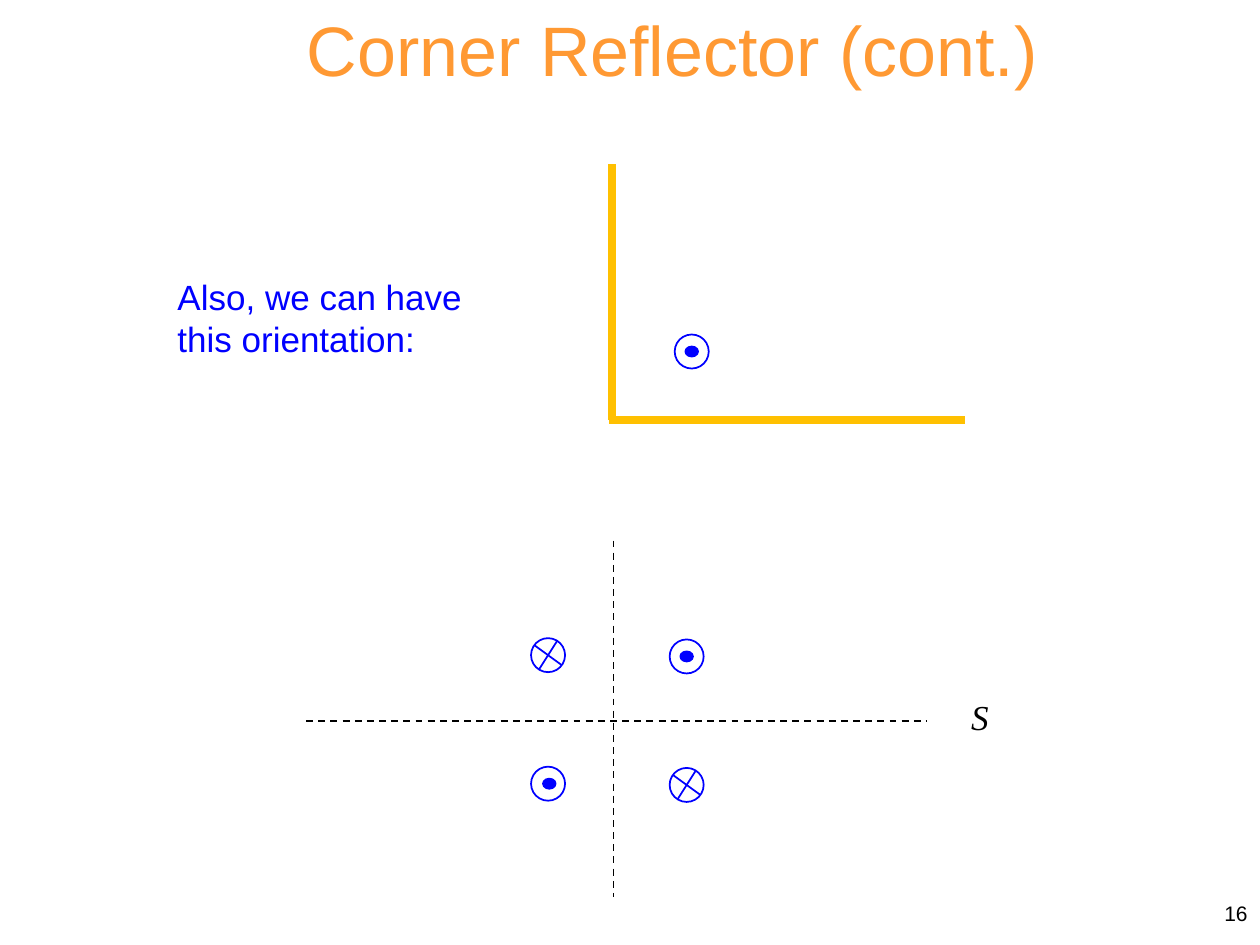
from typing import NamedTuple

from lxml import etree
from pptx import Presentation
from pptx.dml.color import RGBColor
from pptx.enum.dml import MSO_LINE
from pptx.enum.shapes import MSO_CONNECTOR, MSO_SHAPE
from pptx.enum.text import MSO_ANCHOR, PP_ALIGN
from pptx.oxml.ns import qn
from pptx.util import Inches, Pt

ORANGE = RGBColor(0xFF, 0x99, 0x33)
GOLD = RGBColor(0xFF, 0xC0, 0x00)
BLUE = RGBColor(0x00, 0x00, 0xFF)
BLACK = RGBColor(0x00, 0x00, 0x00)
LEFT, CENTER, RIGHT = PP_ALIGN.LEFT, PP_ALIGN.CENTER, PP_ALIGN.RIGHT
TOP, MIDDLE = MSO_ANCHOR.TOP, MSO_ANCHOR.MIDDLE
DASH = MSO_LINE.DASH
STRAIGHT = MSO_CONNECTOR.STRAIGHT
OVAL = MSO_SHAPE.OVAL
RING = 0.27


class Line(NamedTuple):
    x1: float
    y1: float
    x2: float
    y2: float
    color: RGBColor
    width: float = 1
    dash: MSO_LINE | None = None


class Source(NamedTuple):
    """Line current, placed by the centre of its ring."""
    x: float
    y: float
    out: bool
    shift: float = 0  # sideways offset of the dot


AXES = [
    Line(2.43, 5.72, 7.35, 5.72, BLACK, dash=DASH),
    Line(4.87, 4.29, 4.87, 7.12, BLACK, dash=DASH),
]
WALLS = [
    Line(4.83, 3.33, 7.66, 3.33, GOLD, 4.5),
    Line(4.86, 3.33, 4.86, 1.3, GOLD, 4.5),
]
IMAGES = [
    Source(4.35, 5.2, False),
    Source(5.45, 5.21, True),
    Source(5.45, 6.23, False),
    Source(4.35, 6.22, True, 0.01),
]
FEED = Source(5.49, 2.79, True)


def add_text(slide, text: str, x: float, y: float, w: float, h: float, *,
             size: float, color: RGBColor, font: str = "Arial",
             align: PP_ALIGN = LEFT, anchor: MSO_ANCHOR = TOP,
             italic: bool = False, wrap: bool = True) -> None:
    box = slide.shapes.add_textbox(Inches(x), Inches(y), Inches(w), Inches(h))
    frame = box.text_frame
    frame.word_wrap = wrap
    frame.vertical_anchor = anchor
    para = frame.paragraphs[0]
    para.alignment = align
    run = para.add_run()
    run.text = text
    run.font.name = font
    run.font.size = Pt(size)
    run.font.italic = italic
    run.font.color.rgb = color


def add_line(slide, line: Line) -> None:
    shape = slide.shapes.add_connector(
        STRAIGHT, Inches(line.x1), Inches(line.y1),
        Inches(line.x2), Inches(line.y2))
    shape.line.color.rgb = line.color
    shape.line.width = Pt(line.width)
    if line.dash is not None:
        shape.line.dash_style = line.dash
    etree.SubElement(shape._element.spPr, qn("a:effectLst"))


def add_oval(slide, x: float, y: float, w: float, h: float,
             solid: bool = False) -> None:
    shape = slide.shapes.add_shape(
        OVAL, Inches(x - w / 2), Inches(y - h / 2), Inches(w), Inches(h))
    shape.shadow.inherit = False
    shape.line.color.rgb = BLUE
    shape.line.width = Pt(1)
    if solid:
        shape.fill.solid()
        shape.fill.fore_color.rgb = BLUE
    else:
        shape.fill.background()


def add_source(slide, src: Source) -> None:
    x, y = src.x, src.y
    add_oval(slide, x, y, RING, RING)
    if src.out:
        add_oval(slide, x + src.shift, y, 0.1, 0.08, solid=True)
    else:
        for dx, dy in ((0.11, 0.08), (0.07, -0.11)):
            add_line(slide, Line(x - dx, y - dy, x + dx, y + dy, BLUE))


def main() -> None:
    prs = Presentation()
    prs.slide_width, prs.slide_height = Inches(10), Inches(7.5)
    slide = prs.slides.add_slide(prs.slide_layouts[6])

    # Title and remark
    add_text(slide, "Corner Reflector (cont.)", 1.19, 0, 8.29, 0.77,
             size=40, color=ORANGE, align=CENTER)
    add_text(slide, "Also, we can have this orientation:",
             1.31, 2.14, 2.89, 0.77, size=20, color=BLUE)

    # Image problem
    for line in AXES:
        add_line(slide, line)
    add_text(slide, "S", 7.61, 5.47, 0.41, 0.43, size=20, color=BLACK,
             font="Times New Roman", italic=True, wrap=False)
    for src in IMAGES:
        add_source(slide, src)

    # Corner with its feed
    add_source(slide, FEED)
    for line in WALLS:
        add_line(slide, line)

    # Page number
    add_text(slide, "16", 7.92, 7, 2.08, 0.5, size=12, color=BLACK,
             align=RIGHT, anchor=MIDDLE)

    prs.save("out.pptx")


if __name__ == "__main__":
    main()
